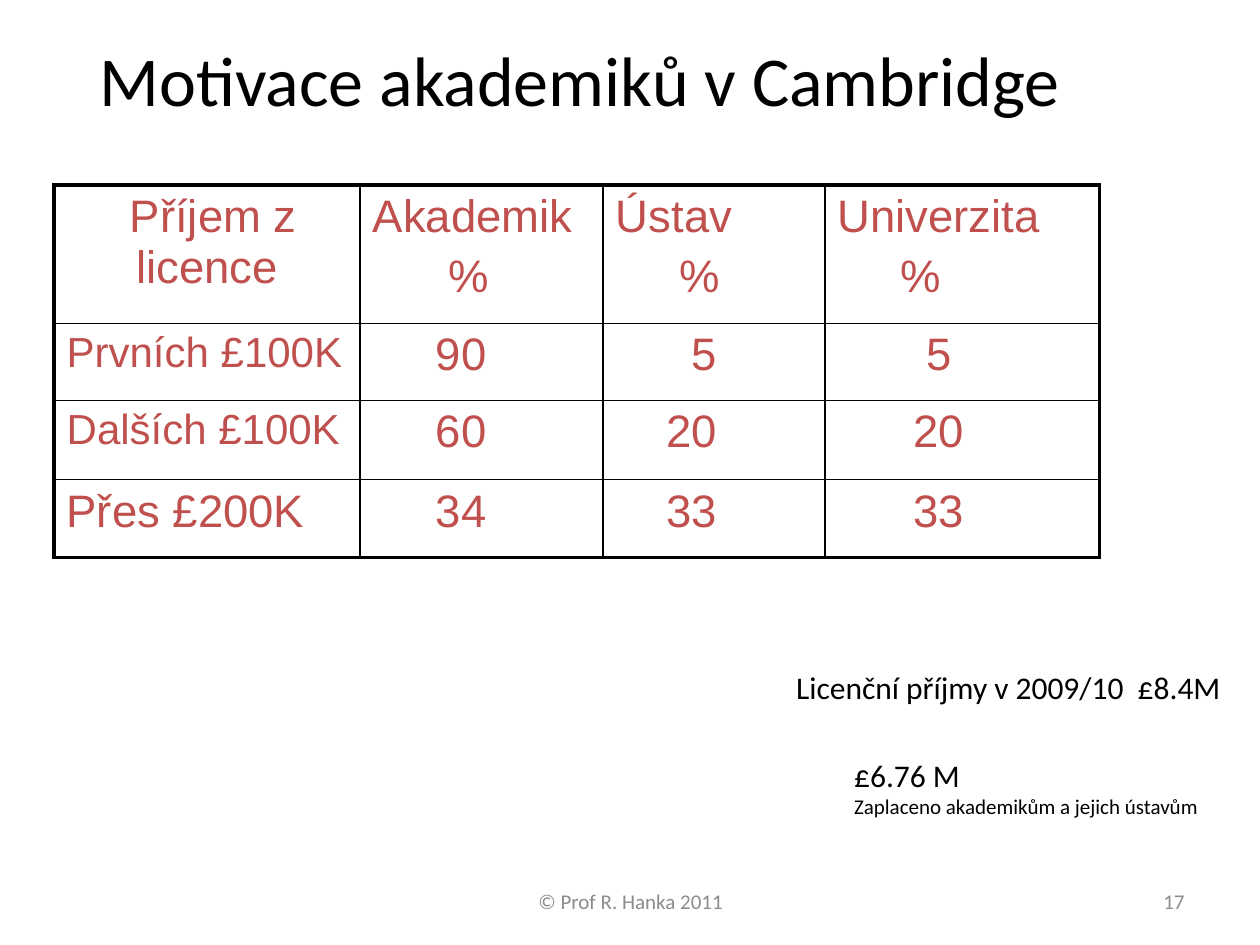
from dataclasses import dataclass

from lxml import etree
from pptx import Presentation
from pptx.dml.color import RGBColor
from pptx.enum.text import MSO_ANCHOR, PP_ALIGN
from pptx.oxml.ns import qn
from pptx.util import Cm, Pt

LEFT, CENTER, RIGHT = PP_ALIGN.LEFT, PP_ALIGN.CENTER, PP_ALIGN.RIGHT
TOP, MIDDLE = MSO_ANCHOR.TOP, MSO_ANCHOR.MIDDLE


@dataclass(frozen=True)
class Theme:
    body: str = "Calibri"
    grid: str = "Arial"
    black: str = "000000"
    grey: str = "8C8C8C"
    red: str = "C0504D"
    title: float = 40
    cell: float = 26
    label: float = 24
    note: float = 18
    small: float = 12
    thin: float = 1
    thick: float = 2.25
    step: float = 0.255  # one indent step in the table, cm


class Deck:
    def __init__(self, theme, slide):
        self.theme, self.slide = theme, slide

    def run(self, para, text, size, font, color):
        run = para.add_run()
        run.text = text
        run.font.name, run.font.size = font, Pt(size)
        run.font.color.rgb = RGBColor.from_string(color)

    def text(self, box, lines, color, align=LEFT, anchor=TOP, wrap=True):
        """Add a text box; lines holds (text, size) pairs."""
        frame = self.slide.shapes.add_textbox(*map(Cm, box)).text_frame
        frame.word_wrap, frame.vertical_anchor = wrap, anchor
        for i, (text, size) in enumerate(lines):
            para = frame.add_paragraph() if i else frame.paragraphs[0]
            para.alignment = align
            self.run(para, text, size, self.theme.body, color)

    def border(self, cell, side, width):
        line = etree.SubElement(cell._tc.get_or_add_tcPr(), qn(f"a:ln{side}"),
                                w=str(Pt(width)))
        fill = etree.SubElement(line, qn("a:solidFill"))
        etree.SubElement(fill, qn("a:srgbClr"), val=self.theme.black)

    def cell(self, cell, lines, outer):
        """Fill a cell; lines holds (text, indent steps, size, align)."""
        look = self.theme
        for side, edge in outer.items():
            self.border(cell, side, look.thick if edge else look.thin)
        cell.fill.background()
        for i, (text, steps, size, align) in enumerate(lines):
            frame = cell.text_frame
            para = frame.add_paragraph() if i else frame.paragraphs[0]
            para.alignment, para.space_before = align, Pt(size * 0.2)
            props = para._p.get_or_add_pPr()
            props.set("marL", "0")
            props.set("indent", str(Cm(steps * look.step)))
            self.run(para, text, size, look.grid, look.red)

    def table(self, left, top, cols, rows, data):
        frame = self.slide.shapes.add_table(
            len(rows), len(cols), Cm(left), Cm(top), Cm(sum(cols)), Cm(sum(rows)))
        table = frame.table
        table.first_row = table.horz_banding = False
        for col, width in zip(table.columns, cols):
            col.width = Cm(width)
        for row, height in zip(table.rows, rows):
            row.height = Cm(height)
        for r, row in enumerate(data):
            for c, lines in enumerate(row):
                outer = {"L": c == 0, "R": c == len(cols) - 1,
                         "T": r == 0, "B": r == len(rows) - 1}
                self.cell(table.cell(r, c), lines, outer)


def main():
    show = Presentation()
    show.slide_width, show.slide_height = Cm(25.4), Cm(19.05)
    look = Theme()
    deck = Deck(look, show.slides.add_slide(show.slide_layouts[6]))

    deck.text((1.09, 0.33, 21.2, 2.51),
              [("Motivace akademiků v Cambridge", look.title)],
              look.black, CENTER, MIDDLE)
    deck.text((8.69, 17.65, 8.05, 1.02), [("© Prof R. Hanka 2011", look.small)],
              look.grey, CENTER, MIDDLE)
    deck.text((18.21, 17.65, 5.92, 1.02), [("17", look.small)],
              look.grey, RIGHT, MIDDLE)

    heads = [("Akademik", 6), ("Ústav", 5), ("Univerzita", 5)]
    shares = [
        ("Prvních £100K", look.label, [("90", 5), ("5", 6), ("5", 7)]),
        ("Dalších £100K", look.label, [("60", 5), ("20", 4), ("20", 6)]),
        ("Přes £200K", look.cell, [("34", 5), ("33", 4), ("33", 6)]),
    ]
    data = [[[("Příjem z licence", 1, look.cell, CENTER)]]
            + [[(name, 0, look.cell, LEFT), ("%", steps, look.cell, LEFT)]
               for name, steps in heads]]
    data += [[[(label, 0, size, LEFT)]]
             + [[(value, steps, look.cell, LEFT)] for value, steps in values]
             for label, size, values in shares]
    deck.table(1.09, 3.73, [6.17, 4.9, 4.47, 5.54], [2.79, 1.55, 1.6, 1.57], data)

    deck.text((15.8, 13.34, 9.17, 1.02),
              [("Licenční příjmy v 2009/10  £8.4M", look.note)],
              look.black, wrap=False)
    deck.text((16.97, 15.11, 7.52, 1.55),
              [("£6.76 M", look.note),
               ("Zaplaceno akademikům a jejich ústavům", look.small)],
              look.black, wrap=False)
    show.save("out.pptx")


if __name__ == "__main__":
    main()
